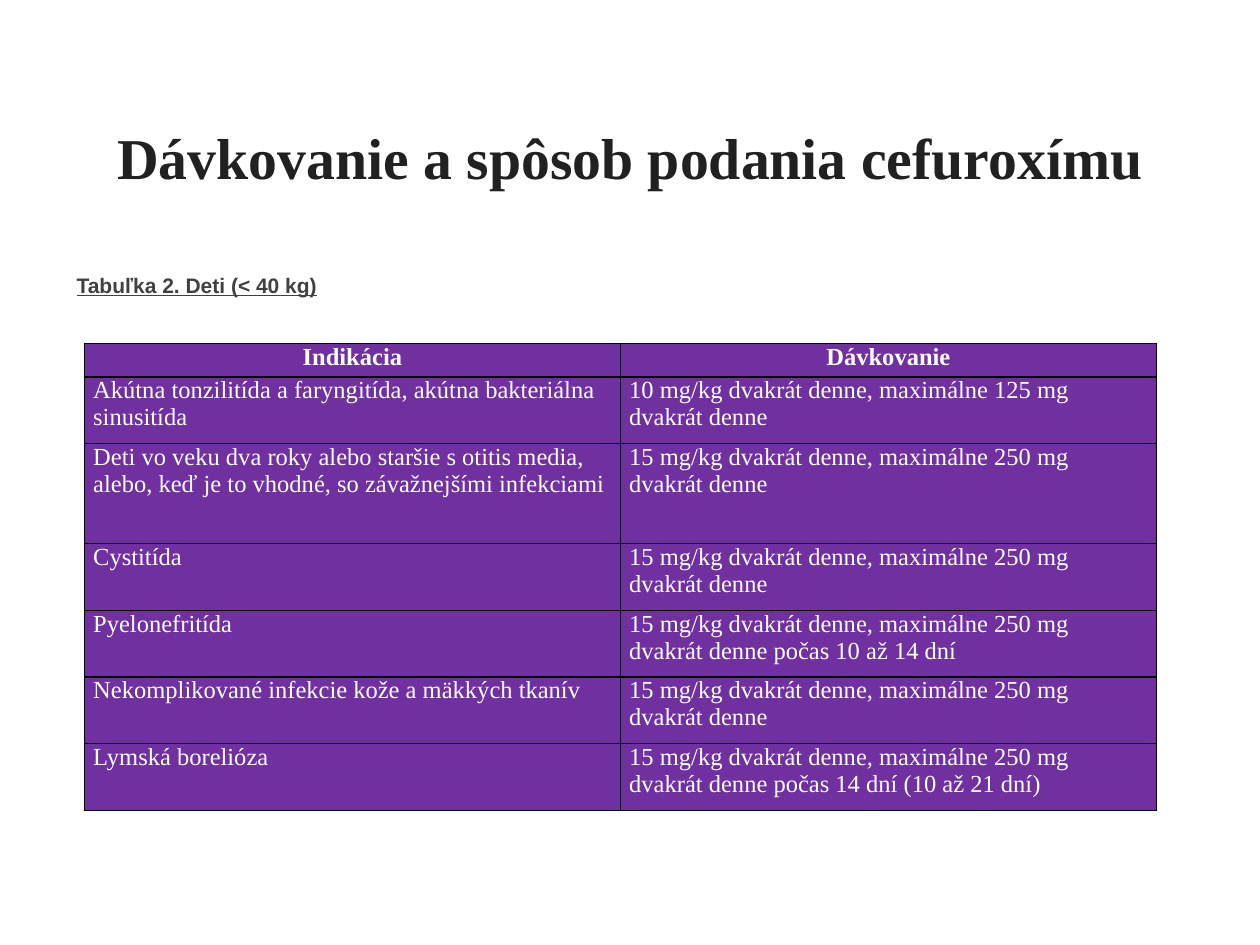
from dataclasses import dataclass

from lxml.etree import SubElement as Sub
from pptx import Presentation
from pptx.dml.color import RGBColor as RGB
from pptx.enum.text import MSO_ANCHOR as Anchor, PP_ALIGN as Align
from pptx.oxml.ns import qn
from pptx.util import Pt


@dataclass(frozen=True)
class Theme:
    title: str = "212121"
    label: str = "404040"
    text: str = "FFFFFF"
    fill: str = "7030A0"
    line: str = "000000"
    serif: str = "Times New Roman"
    sans: str = "Arial"
    big: int = 33
    mid: int = 14
    small: int = 12


THEME = Theme()
DOSE = "15 mg/kg dvakrát denne, maximálne 250 mg dvakrát denne"
ROWS = [
    ("Indikácia", "Dávkovanie"),
    ("Akútna tonzilitída a faryngitída, akútna bakteriálna sinusitída",
     "10 mg/kg dvakrát denne, maximálne 125 mg dvakrát denne"),
    ("Deti vo veku dva roky alebo staršie s otitis media, "
     "alebo, keď je to vhodné, so závažnejšími infekciami", DOSE),
    ("Cystitída", DOSE),
    ("Pyelonefritída", DOSE + " počas 10 až 14 dní"),
    ("Nekomplikované infekcie kože a mäkkých tkanív", DOSE),
    ("Lymská borelióza", DOSE + " počas 14 dní (10 až 21 dní)"),
]
UNIT = 19.05  # height of one table line
LINES = (1, 2, 3, 2, 2, 2, 2)


def write(frame, text, *, size, font, color, bold=False, under=None,
          align=Align.LEFT):
    """Put one formatted paragraph into a text frame."""
    para = frame.paragraphs[0]
    para.alignment = align
    run = para.add_run()
    run.text = text
    face = run.font
    face.size, face.name = Pt(size), font
    face.bold, face.underline = bold, under
    face.color.rgb = RGB.from_string(color)


def add_text(slide, box, text, *, anchor, wrap=True, pad=3.6, **style):
    frame = slide.shapes.add_textbox(*map(Pt, box)).text_frame
    frame.word_wrap = wrap
    frame.vertical_anchor = anchor
    frame.margin_top = frame.margin_bottom = Pt(pad)
    frame.margin_left = frame.margin_right = Pt(7.2)
    write(frame, text, **style)


def add_edges(cell, color, width):
    """Draw all four borders of a cell."""
    props = cell._tc.get_or_add_tcPr()
    for side in ("lnL", "lnR", "lnT", "lnB"):
        edge = Sub(props, qn(f"a:{side}"), w=str(Pt(width)))
        paint = Sub(edge, qn("a:solidFill"))
        Sub(paint, qn("a:srgbClr"), val=color)


def fill_cell(cell, text, head):
    add_edges(cell, THEME.line, 1)
    cell.fill.solid()
    cell.fill.fore_color.rgb = RGB.from_string(THEME.fill)
    cell.margin_left = cell.margin_right = Pt(5.04)
    cell.margin_top = cell.margin_bottom = 0
    write(cell.text_frame, text, size=THEME.mid, font=THEME.serif,
          color=THEME.text, bold=head,
          align=Align.CENTER if head else Align.LEFT)


def add_grid(slide, left, top, width):
    high = UNIT * sum(LINES)
    grid = slide.shapes.add_table(
        len(ROWS), 2, *map(Pt, (left, top, width, high))).table
    for row, lines, texts in zip(grid.rows, LINES, ROWS):
        row.height = Pt(UNIT * lines)
        for cell, text in zip(row.cells, texts):
            fill_cell(cell, text, head=texts is ROWS[0])


def main():
    deck = Presentation()
    deck.slide_width, deck.slide_height = Pt(720), Pt(540)
    slide = deck.slides.add_slide(deck.slide_layouts[6])

    # Title
    add_text(slide, (54, 26.6, 612, 126),
             "Dávkovanie a spôsob podania cefuroxímu",
             anchor=Anchor.MIDDLE, pad=7.2, size=THEME.big,
             font=THEME.serif, color=THEME.title, bold=True,
             align=Align.CENTER)

    # Dosage table
    add_grid(slide, 48.24, 196.4, 612.6)

    # Table label
    add_text(slide, (36.7, 152, 153.4, 35.3), "Tabuľka 2. Deti (< 40 kg)",
             anchor=Anchor.TOP, wrap=False, size=THEME.small,
             font=THEME.sans, color=THEME.label, bold=True, under=True)

    deck.save("out.pptx")


if __name__ == "__main__":
    main()
